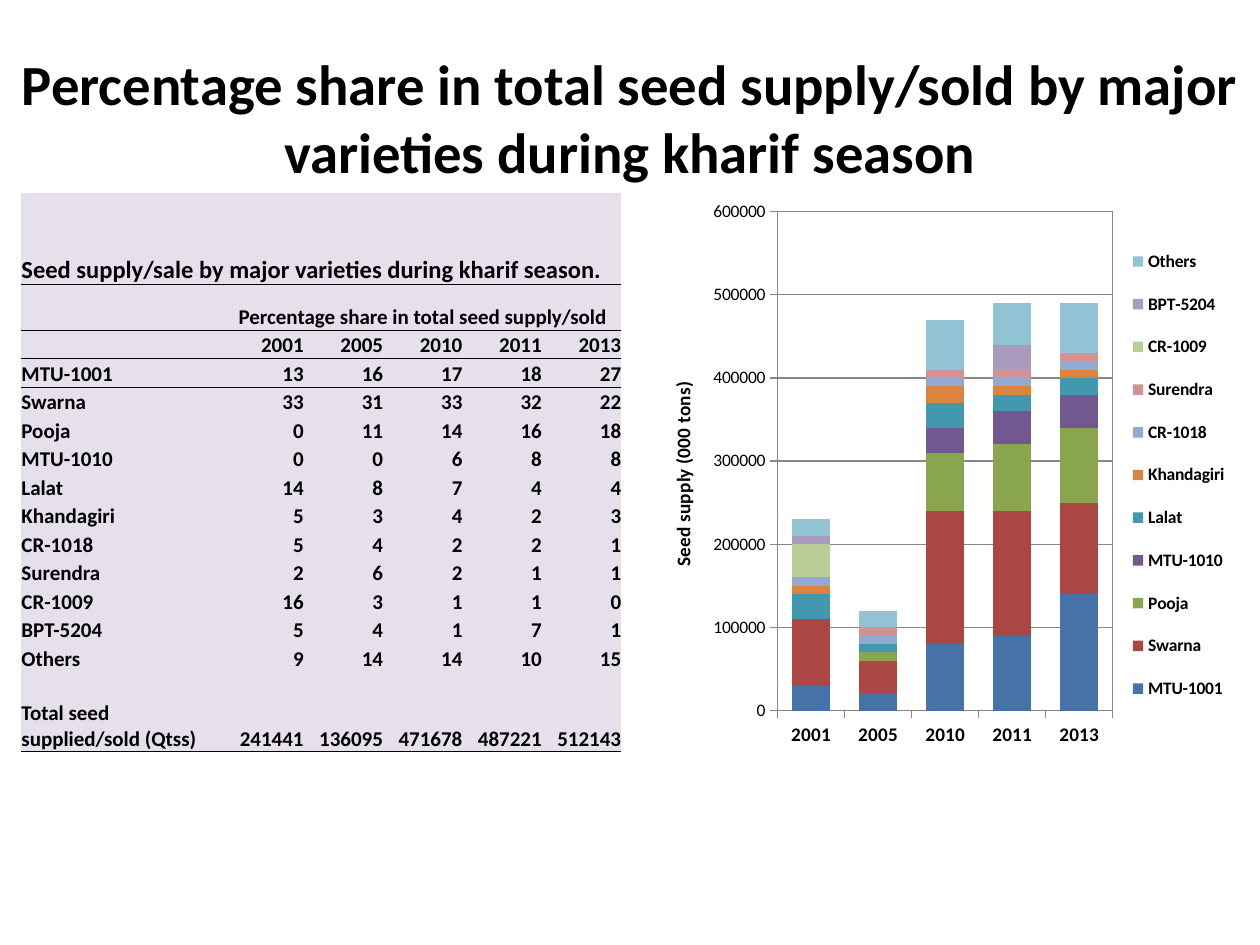
from lxml import etree
from pptx import Presentation
from pptx.chart.data import CategoryChartData
from pptx.dml.color import RGBColor
from pptx.enum.chart import XL_CHART_TYPE, XL_LEGEND_POSITION, XL_TICK_MARK
from pptx.enum.text import MSO_ANCHOR, PP_ALIGN
from pptx.oxml import parse_xml
from pptx.oxml.ns import nsdecls, qn
from pptx.util import Inches, Pt

LEFT, CENTER, RIGHT = PP_ALIGN.LEFT, PP_ALIGN.CENTER, PP_ALIGN.RIGHT
MIDDLE, BOTTOM = MSO_ANCHOR.MIDDLE, MSO_ANCHOR.BOTTOM
STACKED = XL_CHART_TYPE.COLUMN_STACKED
LEGEND_RIGHT = XL_LEGEND_POSITION.RIGHT
TICK_OUT = XL_TICK_MARK.OUTSIDE
PLAIN_TABLE_STYLE = "{2D5ABB26-0587-4C30-8999-92F81FD0307C}"

COLORS = {"text": "000000", "panel": "E5E0EC", "axis": "868686"}

YEARS = ["2001", "2005", "2010", "2011", "2013"]
# Variety: (percentage shares, supply by year, column colour)
VARIETIES = {
    "MTU-1001": ([13, 16, 17, 18, 27], [30000, 20000, 80000, 90000, 140000], "4572A7"),
    "Swarna": ([33, 31, 33, 32, 22], [80000, 40000, 160000, 150000, 110000], "AA4643"),
    "Pooja": ([0, 11, 14, 16, 18], [0, 10000, 70000, 80000, 90000], "89A54E"),
    "MTU-1010": ([0, 0, 6, 8, 8], [0, 0, 30000, 40000, 40000], "71588F"),
    "Lalat": ([14, 8, 7, 4, 4], [30000, 10000, 30000, 20000, 20000], "4198AF"),
    "Khandagiri": ([5, 3, 4, 2, 3], [10000, 0, 20000, 10000, 10000], "DB843D"),
    "CR-1018": ([5, 4, 2, 2, 1], [10000, 10000, 10000, 10000, 10000], "93A9CF"),
    "Surendra": ([2, 6, 2, 1, 1], [0, 10000, 10000, 10000, 10000], "D19392"),
    "CR-1009": ([16, 3, 1, 1, 0], [40000, 0, 0, 0, 0], "B9CD96"),
    "BPT-5204": ([5, 4, 1, 7, 1], [10000, 0, 0, 30000, 0], "A99BBD"),
    "Others": ([9, 14, 14, 10, 15], [20000, 20000, 60000, 50000, 60000], "91C3D5"),
}
TOTALS = [241441, 136095, 471678, 487221, 512143]


class SlideBuilder:
    font_name = "Calibri"

    def __init__(self, slide):
        self.slide = slide

    def style(self, font, size, bold=True):
        font.name, font.size, font.bold = self.font_name, Pt(size), bold
        font.color.rgb = RGBColor.from_string(COLORS["text"])

    def title(self, text, left, top, width, height, size):
        title = self.slide.shapes.title
        title.left, title.top = Inches(left), Inches(top)
        title.width, title.height = Inches(width), Inches(height)
        frame = title.text_frame
        frame.text = text
        frame.word_wrap = True
        frame.vertical_anchor = MIDDLE
        frame.paragraphs[0].alignment = CENTER
        self.style(frame.paragraphs[0].runs[0].font, size)

    def table(self, rows, left, top, widths, heights):
        frame = self.slide.shapes.add_table(
            len(rows), len(widths), Inches(left), Inches(top),
            Inches(sum(widths)), Inches(sum(heights)))
        table = frame.table
        table.first_row = table.horz_banding = False
        table._tbl.tblPr.find(qn("a:tableStyleId")).text = PLAIN_TABLE_STYLE
        for column, width in zip(table.columns, widths):
            column.width = Inches(width)
        for row, height in zip(table.rows, heights):
            row.height = Inches(height)
        for r, row in enumerate(rows):
            for c, value in enumerate(row):
                self.cell(table.cell(r, c), value, LEFT if c == 0 else RIGHT)
        return table

    def cell(self, cell, value, align, size=12):
        cell.margin_left = cell.margin_right = cell.margin_top = cell.margin_bottom = 0
        cell.vertical_anchor = BOTTOM
        cell.fill.solid()
        cell.fill.fore_color.rgb = RGBColor.from_string(COLORS["panel"])
        cell.text_frame.text = str(value)
        paragraph = cell.text_frame.paragraphs[0]
        paragraph.alignment = align
        for run in paragraph.runs:
            self.style(run.font, size)
        if not paragraph.runs:
            etree.SubElement(paragraph._p, qn("a:endParaRPr"), sz=str(size * 100))

    def rule_below(self, table, row, first_column=0):
        for column in range(first_column, len(table.columns)):
            self.border(table.cell(row, column), "lnB")
            if row + 1 < len(table.rows):
                self.border(table.cell(row + 1, column), "lnT")

    def border(self, cell, side):
        line = parse_xml(
            f'<a:{side} {nsdecls("a")} w="{Pt(0.5)}"><a:solidFill>'
            f'<a:srgbClr val="{COLORS["text"]}"/></a:solidFill></a:{side}>')
        properties = cell._tc.get_or_add_tcPr()
        has_top = properties.find(qn("a:lnT")) is not None
        properties.insert(1 if side == "lnB" and has_top else 0, line)

    def chart(self, data, colors, left, top, width, height):
        chart = self.slide.shapes.add_chart(
            STACKED, Inches(left), Inches(top), Inches(width), Inches(height), data).chart
        chart.has_title = False
        self.style(chart.font, 10, bold=False)
        plot = chart.plots[0]
        plot.gap_width, plot.overlap = 75, 100
        plot.vary_by_categories = False
        for series, color in zip(plot.series, colors):
            series.format.fill.solid()
            series.format.fill.fore_color.rgb = RGBColor.from_string(color)
            series.invert_if_negative = False
        return chart

    def axis(self, axis, size, bold):
        axis.major_tick_mark = TICK_OUT
        self.style(axis.tick_labels.font, size, bold)
        self.gray(axis.format.line)

    def gray(self, line):
        line.color.rgb = RGBColor.from_string(COLORS["axis"])
        line.width = Pt(0.75)

    def layout(self, element, x, y, w, h, inner=False):
        """Place a chart part by fractions of the chart's size."""
        target = '<c:layoutTarget val="inner"/>' if inner else ""
        sizes = "".join(f'<c:{tag} val="{value}"/>' for tag, value in zip("xywh", (x, y, w, h)))
        layout = parse_xml(
            f'<c:layout {nsdecls("c")}><c:manualLayout>{target}<c:xMode val="edge"/>'
            f'<c:yMode val="edge"/>{sizes}</c:manualLayout></c:layout>')
        for old in element.findall(qn("c:layout")):
            element.remove(old)
        position = element.find(qn("c:legendPos"))
        element.insert(0 if position is None else 1, layout)


def main():
    deck = Presentation()
    deck.slide_width, deck.slide_height = Inches(10), Inches(7.5)
    builder = SlideBuilder(deck.slides.add_slide(deck.slide_layouts[5]))

    # Title
    builder.title("Percentage share in total seed supply/sold by major varieties "
                  "during kharif season", 0, 0.3, 10, 1.25, 32.4)

    # Table of shares
    blank = [""] * 6
    rows = [blank, blank, ["", *YEARS]]
    rows += [[name, *shares] for name, (shares, _, _) in VARIETIES.items()]
    rows += [blank, ["Total seed supplied/sold (Qtss)", *TOTALS]]
    caption, heading, total, table_height = 0.73, 0.36, 0.41, 4.44
    line_count = len(rows) - 3
    line = (table_height - caption - heading - total) / line_count
    table = builder.table(rows, 0.17, 1.53, [1.61] + [0.63] * 5,
                          [caption, heading] + [line] * line_count + [total])
    table.cell(0, 0).merge(table.cell(0, 5))
    table.cell(1, 1).merge(table.cell(1, 5))
    builder.cell(table.cell(0, 0),
                 "Seed supply/sale by major varieties during kharif season.", LEFT, 14)
    builder.cell(table.cell(1, 1), "Percentage share in total seed supply/sold", CENTER)
    for row, first_column in ((0, 0), (1, 1), (2, 0), (len(rows) - 1, 0)):
        builder.rule_below(table, row, first_column)

    # Stacked columns of seed supply
    data = CategoryChartData(number_format="0")
    data.categories = YEARS
    for name, (_, supply, _) in VARIETIES.items():
        data.add_series(name, supply)
    chart = builder.chart(data, [color for _, _, color in VARIETIES.values()],
                          5.08, 1.5, 4.75, 4.5)

    # Axes
    builder.axis(chart.category_axis, 11, True)
    supply_axis = chart.value_axis
    builder.axis(supply_axis, 10, False)
    supply_axis.minimum_scale, supply_axis.maximum_scale = 0, 600000
    supply_axis.major_unit = 100000
    supply_axis.tick_labels.number_format = "0"
    supply_axis.tick_labels.number_format_is_linked = False
    builder.gray(supply_axis.major_gridlines.format.line)
    axis_title = supply_axis.axis_title.text_frame
    axis_title.text = "Seed supply (000 tons)"
    builder.style(axis_title.paragraphs[0].runs[0].font, 11)

    # Plot area and legend
    plot_area = chart._chartSpace.chart.plotArea
    builder.layout(plot_area, 0.23, 0.04, 0.56, 0.88, inner=True)
    plot_area.append(parse_xml(
        f'<c:spPr {nsdecls("c", "a")}><a:noFill/><a:ln w="{Pt(0.75)}"><a:solidFill>'
        f'<a:srgbClr val="{COLORS["axis"]}"/></a:solidFill></a:ln></c:spPr>'))
    chart.has_legend = True
    chart.legend.position = LEGEND_RIGHT
    chart.legend.include_in_layout = False
    builder.style(chart.legend.font, 10)
    builder.layout(chart.legend._element, 0.81, 0.07, 0.18, 0.87)

    deck.save("out.pptx")


if __name__ == "__main__":
    main()
